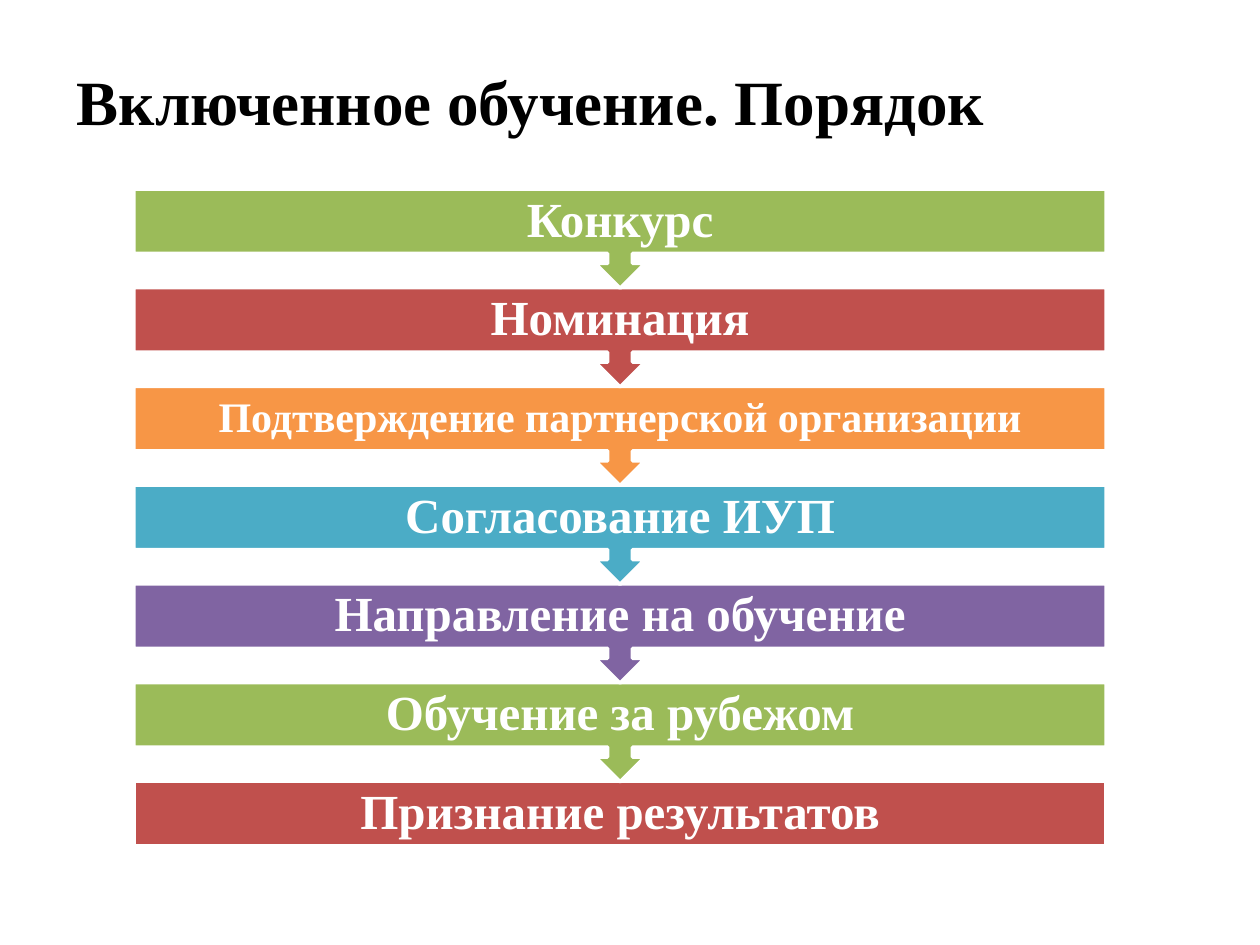
import pptx
import pptx.dml.color
import pptx.enum.shapes
import pptx.enum.text
import pptx.util

Cm = pptx.util.Cm
Pt = pptx.util.Pt
SHAPE = pptx.enum.shapes.MSO_SHAPE
ALIGN = pptx.enum.text.PP_ALIGN

FONT = "Times New Roman"
WHITE, BLACK = "FFFFFF", "000000"
GREEN, RED, ORANGE, TEAL, PURPLE = "9BBB59", "C0504D", "F79646", "4BACC6", "8064A2"

# Step name, bar colour, text size
STEPS = [
    ("Конкурс", GREEN, 28),
    ("Номинация", RED, 28),
    ("Подтверждение партнерской организации", ORANGE, 24),
    ("Согласование ИУП", TEAL, 28),
    ("Направление на обучение", PURPLE, 28),
    ("Обучение за рубежом", GREEN, 28),
    ("Признание результатов", RED, 28),
]


def color(hex_value):
    return pptx.dml.color.RGBColor.from_string(hex_value)


def add_text(shapes, text, box, size, ink=BLACK, align=ALIGN.LEFT,
             spacing=1.0, inset_x=0.25, inset_y=0.13):
    """Place bold text, centred vertically in box (left, top, width, height in cm)."""
    frame = shapes.add_textbox(*map(Cm, box)).text_frame
    frame.word_wrap = True
    frame.vertical_anchor = pptx.enum.text.MSO_ANCHOR.MIDDLE
    frame.margin_left = frame.margin_right = Cm(inset_x)
    frame.margin_top = frame.margin_bottom = Cm(inset_y)
    paragraph = frame.paragraphs[0]
    paragraph.alignment = align
    paragraph.line_spacing = spacing
    run = paragraph.add_run()
    run.text = text
    run.font.name = FONT
    run.font.size = Pt(size)
    run.font.bold = True
    run.font.color.rgb = color(ink)


def add_bar(shapes, preset, box, fill, rotation=0):
    bar = shapes.add_shape(preset, *map(Cm, box))
    bar.rotation = rotation
    bar.shadow.inherit = False
    bar.fill.solid()
    bar.fill.fore_color.rgb = color(fill)
    bar.line.color.rgb = color(WHITE)
    bar.line.width = Pt(2)


def add_process(slide, box, steps):
    """Stack the steps downwards; every step but the last points to the next."""
    left, top, width, height = box
    bar_height = 1.3
    pitch = (height - bar_height) / (len(steps) - 1)
    shapes = slide.shapes.add_group_shape().shapes

    # The last step lies at the back, so each arrow tip overlaps the bar below
    for index, (name, fill, size) in reversed(list(enumerate(steps))):
        y = top + index * pitch
        if index == len(steps) - 1:
            add_bar(shapes, SHAPE.RECTANGLE, (left, y, width, bar_height), fill)
        else:
            add_bar(shapes, SHAPE.UP_ARROW_CALLOUT, (left, y, width, 2), fill, rotation=180)
        inset = size * 0.02
        add_text(shapes, name, (left, y, width, bar_height), size, ink=WHITE,
                 align=ALIGN.CENTER, spacing=0.9, inset_x=inset, inset_y=inset)


def main():
    deck = pptx.Presentation()
    deck.slide_width, deck.slide_height = Cm(25.4), Cm(19.05)
    slide = deck.slides.add_slide(deck.slide_layouts[6])

    # Title
    add_text(slide.shapes, "Включенное обучение. Порядок", (1.3, 0.33, 23, 3.4), 36)
    # Chain of steps
    add_process(slide, (2.7, 3.81, 19.6, 13.24), STEPS)

    deck.save("out.pptx")


if __name__ == "__main__":
    main()
